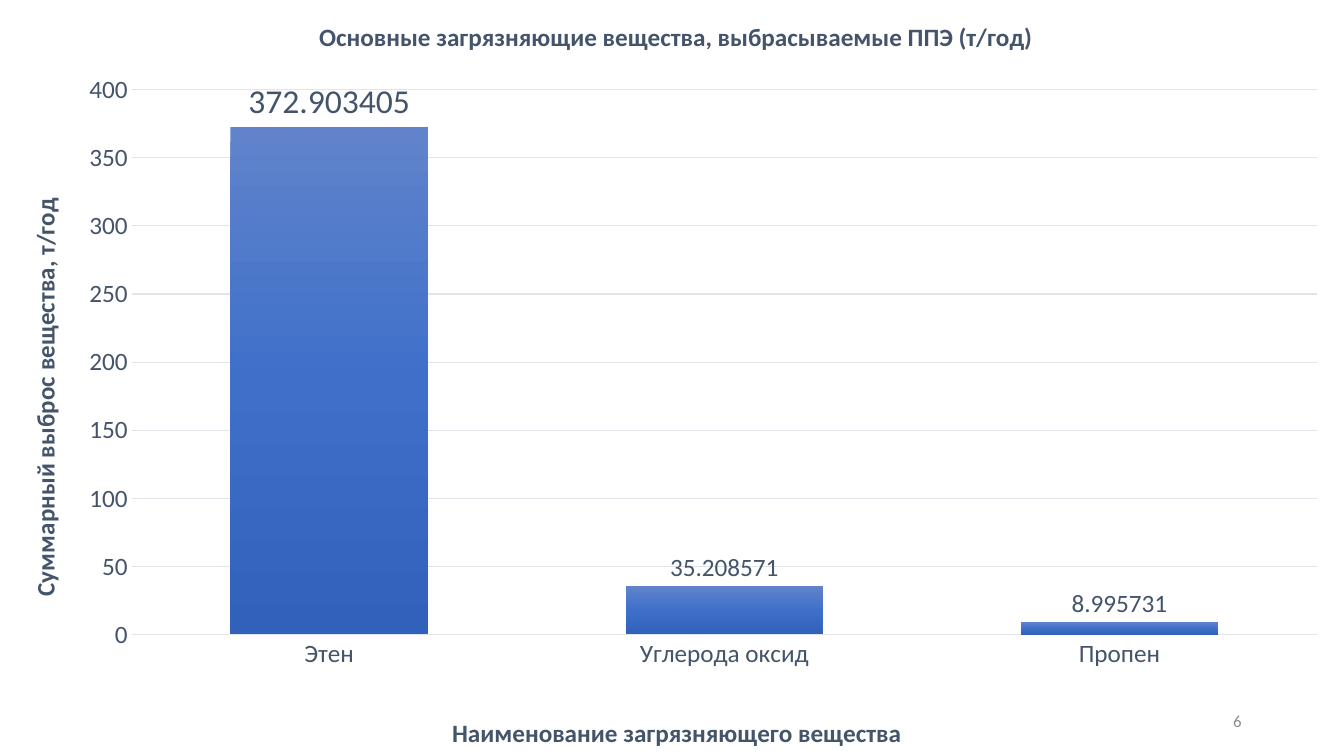
import copy
import pptx
import pptx.chart.data
import pptx.dml.color
import pptx.enum.chart
import pptx.enum.text
import pptx.oxml
import pptx.oxml.ns
import pptx.util

Cm, Pt = pptx.util.Cm, pptx.util.Pt
RGB = pptx.dml.color.RGBColor
qn = pptx.oxml.ns.qn

# Content
TITLE = "Основные загрязняющие вещества, выбрасываемые ППЭ (т/год)"
X_NAME = "Наименование загрязняющего вещества"
Y_NAME = "Суммарный выброс вещества, т/год"
DATA = {"Этен": 372.903405, "Углерода оксид": 35.208571, "Пропен": 8.995731}
PAGE = "6"

# Look
FONT = "Calibri"
SLATE = RGB(0x44, 0x54, 0x6A)
PALE = RGB(0xE0, 0xE5, 0xEB)
GREY = RGB(0x8C, 0x8C, 0x8C)
BLUES = [(0, RGB(0x61, 0x83, 0xCB)), (0.5, RGB(0x3E, 0x70, 0xCA)),
         (1, RGB(0x30, 0x62, 0xBB))]
WIDE, HIGH = Cm(33.87), Cm(19.05)


def style(font, size=18, color=SLATE, bold=False):
    font.name, font.size, font.bold = FONT, Pt(size), bold
    font.color.rgb = color


def rule(line):
    line.width = Pt(0.75)
    line.color.rgb = PALE


def place(node, index, inner=False, **parts):
    """Pin a chart part by fractions of the chart area."""
    for old in node.findall(qn("c:layout")):
        node.remove(old)
    tags = '<c:layoutTarget val="inner"/>' if inner else ""
    tags += "".join(f'<c:{k}Mode val="edge"/>' for k in "xy")
    tags += "".join(f'<c:{k} val="{v}"/>' for k, v in parts.items())
    space = pptx.oxml.ns.nsdecls("c")
    node.insert(index, pptx.oxml.parse_xml(
        f"<c:layout {space}><c:manualLayout>{tags}</c:manualLayout></c:layout>"))


def label(title, text, x, y):
    para = title.text_frame.paragraphs[0]
    para.text = text
    style(para.font, bold=True)
    place(title._element, 1, x=x, y=y)


deck = pptx.Presentation()
deck.slide_width, deck.slide_height = WIDE, HIGH
slide = deck.slides.add_slide(deck.slide_layouts[6])

# Chart
data = pptx.chart.data.CategoryChartData()
data.categories = list(DATA)
data.add_series("Series 1", list(DATA.values()))
kind = pptx.enum.chart.XL_CHART_TYPE.COLUMN_CLUSTERED
chart = slide.shapes.add_chart(kind, 0, 0, WIDE, HIGH, data).chart
style(chart.font)
chart.has_legend = False
label(chart.chart_title, TITLE, 0.234, 0.02)
place(chart._chartSpace.chart.plotArea, 0, inner=True,
      x=0.098, y=0.12, w=0.882, h=0.728)

# Axes
cats, vals = chart.category_axis, chart.value_axis
for axis in (cats, vals):
    axis.major_tick_mark = pptx.enum.chart.XL_TICK_MARK.NONE
    axis.minor_tick_mark = pptx.enum.chart.XL_TICK_MARK.NONE
    style(axis.tick_labels.font)
label(cats.axis_title, X_NAME, 0.333, 0.95)
label(vals.axis_title, Y_NAME, 0.017, 0.264)
rule(cats.format.line)
rule(vals.major_gridlines.format.line)
vals.format.line.fill.background()
vals.minimum_scale, vals.maximum_scale, vals.major_unit = 0, 400, 50

# Bars
plot = chart.plots[0]
plot.gap_width, plot.overlap, plot.vary_by_categories = 100, -24, False
bars = plot.series[0]
fill = bars.format.fill
fill.gradient()
fill.gradient_angle = 270
stops = fill.gradient_stops._gsLst
stops.append(copy.deepcopy(stops[-1]))
for stop, (spot, color) in zip(fill.gradient_stops, BLUES):
    stop.position, stop.color.rgb = spot, color

# Bar labels, the first one larger
above = pptx.enum.chart.XL_LABEL_POSITION.OUTSIDE_END
tags = bars.data_labels
tags.show_value = True
first = bars.points[0].data_label
for item, size in ((tags, 18), (first, 24)):
    style(item.font, size)
    item.position = above

# Page number
box = slide.shapes.add_textbox(Cm(23.92), Cm(17.66), Cm(7.62), Cm(1.01))
frame = box.text_frame
frame.word_wrap = True
frame.vertical_anchor = pptx.enum.text.MSO_ANCHOR.MIDDLE
para = frame.paragraphs[0]
para.text = PAGE
para.alignment = pptx.enum.text.PP_ALIGN.RIGHT
style(para.font, 12, GREY)

deck.save("out.pptx")
